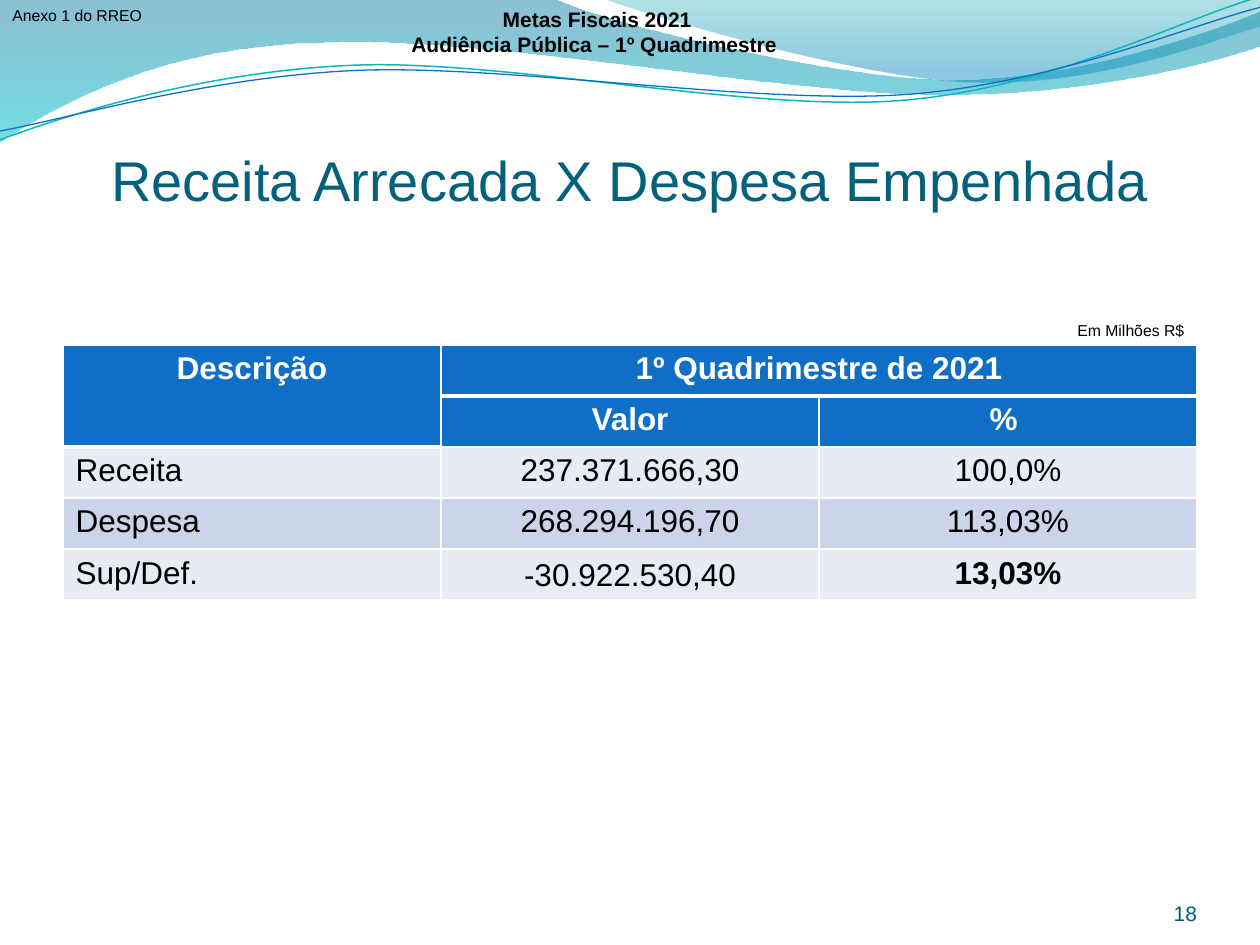
"""Builds the revenue versus expenditure slide of the fiscal targets hearing."""
from math import cos, radians, sin
from lxml.etree import SubElement
from pptx import Presentation
from pptx.dml.color import RGBColor
from pptx.enum.text import MSO_ANCHOR, MSO_AUTO_SIZE, PP_ALIGN
from pptx.oxml.ns import qn
from pptx.util import Cm, Pt

COLORS = {"blue": "0F6FC6", "teal": "09B7BF", "title": "04617B", "number": "035C75",
          "black": "000000", "white": "FFFFFF", "light": "E7EBF4", "band": "CCD4EA",
          "deep": "0074A0", "aqua": "00C4CD", "sky": "008ABF", "sea": "00A0A8"}
FONT = "Arial"
L, C, R = PP_ALIGN.LEFT, PP_ALIGN.CENTER, PP_ALIGN.RIGHT
TOP, MID, BOTTOM = MSO_ANCHOR.TOP, MSO_ANCHOR.MIDDLE, MSO_ANCHOR.BOTTOM

WAVES = [
    {"path": [(0, 0), (11.18, -0.03), (12.09, 0.43, 16.87, 1.6, 19.25, 1.6),
              (21.67, 1.6, 24.33, 0.66, 25.4, 0.23), (25.43, 0.91),
              (24.97, 1.12, 22.1, 1.93, 18.95, 1.91), (15.8, 1.91, 9.7, 0.71, 6.53, 0.86),
              (3.28, 0.89, 1.17, 2.11, -0.03, 2.87)],
     "stops": [(0, "deep", 45), (1, "aqua", 55)], "angle": 270},
    {"path": [(12.17, -0.03), (12.93, 0.28, 17.32, 1.57, 19.53, 1.65),
              (22.11, 1.75, 24.41, 0.81, 25.4, 0.53), (25.4, 0)],
     "stops": [(0.2, "sky", 45), (1, "sea", 30)], "angle": 90},
    {"path": [(0, 2.82), (1.22, 2.36, 4.01, 1.45, 7.04, 1.32),
              (10.03, 1.17, 15.06, 2.26, 18.11, 2.03), (21.16, 1.8, 23.83, 0.38, 25.35, -0.05)],
     "line": ("teal", 0.85), "turn": -2.7, "center": (12.68, 1.46)},
    {"path": [(0, 2.64), (1.19, 2.44, 4.17, 1.55, 7.19, 1.42),
              (10.24, 1.3, 15.16, 2.11, 18.21, 1.91), (21.23, 1.7, 23.9, 0.53, 25.4, 0.15)],
     "line": ("blue", 0.75), "turn": -2.7, "center": (12.69, 1.5)},
]

LABELS = [
    (["Receita Arrecada X Despesa Empenhada"], (1.27, 1.96, 22.86, 3.18), 32, "title", False, C, MID, 0),
    (["18"], (22.02, 17.65, 2.11, 1.02), 12, "number", False, R, BOTTOM, 0),
    (["Em Milhões R$"], (21.46, 6.35, 2.67, 0.63), 9, "black", False, C, TOP, 0.12),
    (["Anexo 1 do RREO"], (0, 0, 3.45, 0.63), 9, "black", False, L, TOP, 0.25),
    (["Metas Fiscais 2021", "Audiência Pública – 1º Quadrimestre "],
     (7.74, 0, 8.6, 1.27), 12, "black", True, C, MID, 0.25),
]

ROWS = [("Descrição", "1º Quadrimestre de 2021", ""),
        ("", "Valor", "% "),
        ("Receita", "237.371.666,30", "100,0%"),
        ("Despesa", "268.294.196,70", "113,03%"),
        ("Sup/Def.", "-30.922.530,40", "13,03%")]
HEAD_ROWS = 2
BOX = (1.27, 6.95, 22.86, 5.15)
THIN, THICK = 0.96, 3


def rgb(name):
    return RGBColor.from_string(COLORS[name])


def turned(pt, center, degrees):
    a = radians(degrees)
    dx, dy = pt[0] - center[0], pt[1] - center[1]
    return center[0] + dx * cos(a) - dy * sin(a), center[1] + dx * sin(a) + dy * cos(a)


def add_outline(s, wave):
    turn, center = wave.get("turn", 0), wave.get("center", (0, 0))
    segs = [list(zip(seg[::2], seg[1::2])) for seg in wave["path"]]
    pts = [turned(pt, center, -turn) for seg in segs for pt in seg]
    pts = [(Cm(x), Cm(y)) for x, y in pts]
    fb = s.shapes.build_freeform(*pts[0])
    fb.add_line_segments(pts[1:], close="stops" in wave)
    sp = fb.convert_to_shape()
    sp.rotation = turn % 360
    lines = iter(list(sp._element.iter(qn("a:lnTo"))))
    for seg in segs[1:]:
        group = [next(lines) for _ in seg]
        if len(group) == 3:
            curve = SubElement(group[0].getparent(), qn("a:cubicBezTo"))
            group[0].addprevious(curve)
            for line in group:
                curve.append(line[0])
                line.getparent().remove(line)
    return sp


def add_wave(s, wave):
    sp = add_outline(s, wave)
    sp.shadow.inherit = False
    if "line" in wave:
        color, width = wave["line"]
        sp.fill.background()
        sp.line.color.rgb = rgb(color)
        sp.line.width = Pt(width)
        return
    sp.fill.gradient()
    sp.fill.gradient_angle = wave["angle"]
    for stop, (pos, color, _) in zip(sp.fill.gradient_stops, wave["stops"]):
        stop.position = pos
        stop.color.rgb = rgb(color)
    clrs = list(sp._element.spPr.iter(qn("a:srgbClr")))
    for clr, (_, _, alpha) in zip(clrs, wave["stops"]):
        SubElement(clr, qn("a:alpha"), val=str(alpha * 1000))
    sp.line.fill.background()


def write(p, text, size, color, bold, align):
    p.alignment = align
    r = p.add_run()
    r.text = text
    r.font.name, r.font.size, r.font.bold = FONT, Pt(size), bold
    r.font.color.rgb = rgb(color)


def add_label(s, lines, box, size, color, bold, align, anchor, side):
    tf = s.shapes.add_textbox(*map(Cm, box)).text_frame
    tf.word_wrap = True
    tf.vertical_anchor = anchor
    tf.margin_left = tf.margin_right = Cm(side)
    if side:
        tf.auto_size = MSO_AUTO_SIZE.SHAPE_TO_FIT_TEXT
    else:
        tf.margin_top, tf.margin_bottom = Cm(0 if anchor == BOTTOM else 0.13), 0
    for i, line in enumerate(lines):
        p = tf.add_paragraph() if i else tf.paragraphs[0]
        write(p, line, size, color, bold, align)


def set_borders(cell, thick):
    tcPr = cell._tc.get_or_add_tcPr()
    for i, side in enumerate("LRTB"):
        width = Pt(THICK if side in thick else THIN)
        ln = SubElement(tcPr, qn(f"a:ln{side}"), w=str(width))
        tcPr.insert(i, ln)
        SubElement(SubElement(ln, qn("a:solidFill")), qn("a:srgbClr"), val=COLORS["white"])


def add_grid(s):
    n_rows, n_cols = len(ROWS), len(ROWS[0])
    table = s.shapes.add_table(n_rows, n_cols, *map(Cm, BOX)).table
    table.first_row = table.horz_banding = False
    for col in table.columns:
        col.width = Cm(BOX[2] / n_cols)
    for row in table.rows:
        row.height = Cm(BOX[3] / n_rows)
    table.cell(0, 0).merge(table.cell(1, 0))
    table.cell(0, 1).merge(table.cell(0, 2))
    for i, row in enumerate(ROWS):
        head = i < HEAD_ROWS
        for j, text in enumerate(row):
            cell = table.cell(i, j)
            cell.fill.solid()
            cell.fill.fore_color.rgb = rgb("blue" if head else "band" if i % 2 else "light")
            below = i == 0 or (i, j) == (1, 0)
            above = (i == 1 and j > 0) or (i, j) == (2, 0)
            set_borders(cell, "B" * below + "T" * above)
            if text:
                last = i == n_rows - 1
                if last and j == 1:
                    cell.vertical_anchor = MID
                    cell.margin_left = cell.margin_right = cell.margin_top = Cm(0.03)
                    cell.margin_bottom = 0
                write(cell.text_frame.paragraphs[0], text, 18, "white" if head else "black",
                      head or (last and j == 2), C if head or j else L)


def main():
    prs = Presentation()
    prs.slide_width, prs.slide_height = Cm(25.4), Cm(19.05)
    s = prs.slides.add_slide(prs.slide_layouts[6])
    for wave in WAVES:
        add_wave(s, wave)
    add_grid(s)
    for label in LABELS:
        add_label(s, *label)
    prs.save("out.pptx")


if __name__ == "__main__":
    main()
